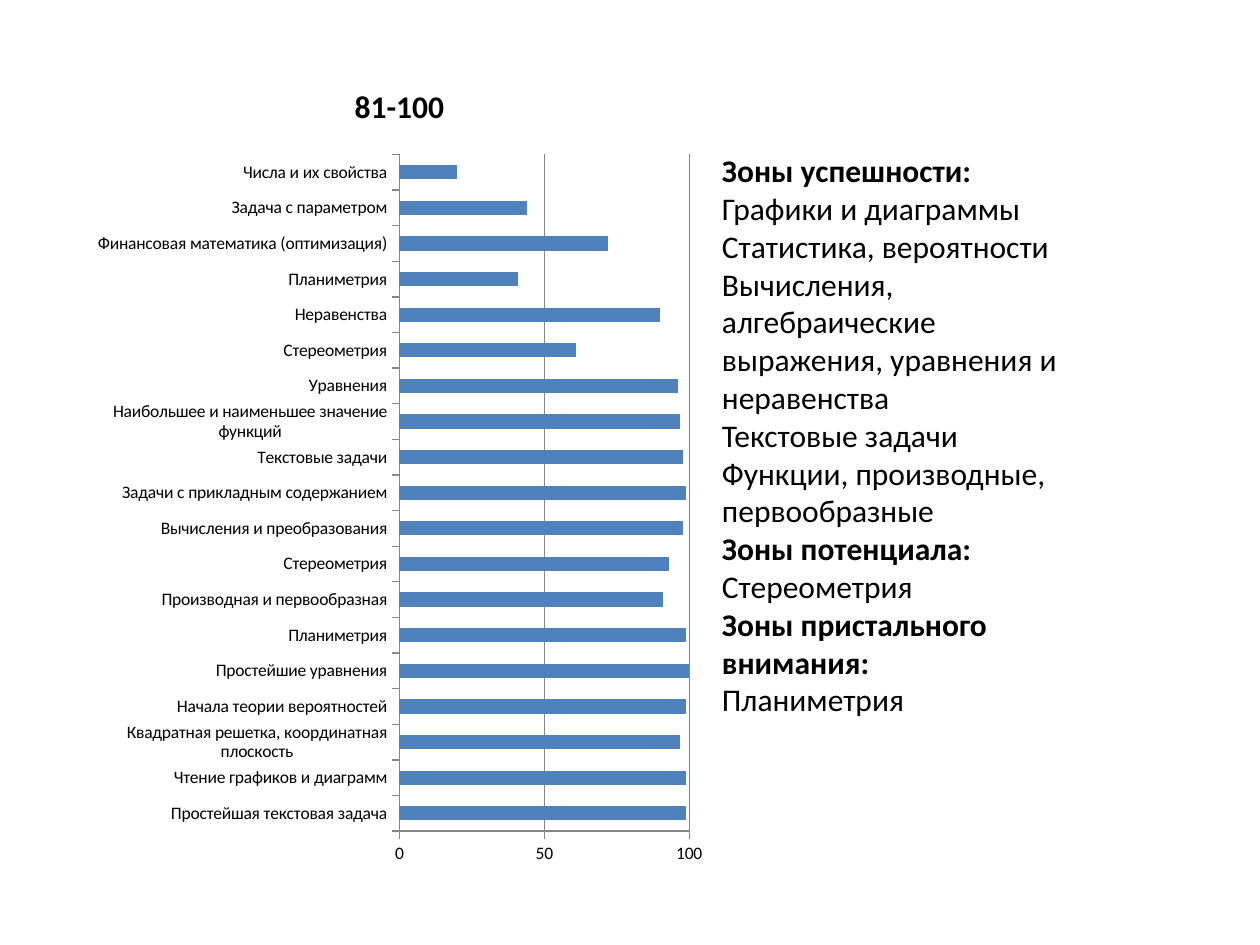
"""Build the slide with task results and success zones for the 81-100 score group."""
from dataclasses import dataclass

from lxml.etree import SubElement
from pptx import Presentation
from pptx.chart.data import CategoryChartData
from pptx.dml.color import RGBColor
from pptx.enum.chart import XL_CHART_TYPE as ChartType, XL_TICK_MARK as Tick
from pptx.enum.text import MSO_ANCHOR as Anchor, MSO_AUTO_SIZE as AutoSize
from pptx.oxml.ns import qn
from pptx.util import Inches, Pt


@dataclass(frozen=True)
class Theme:
    font: str = "Calibri"
    ink: RGBColor = RGBColor(0x00, 0x00, 0x00)
    bar: RGBColor = RGBColor(0x4F, 0x81, 0xBD)
    rule: RGBColor = RGBColor(0x86, 0x86, 0x86)
    label_size: int = 10
    text_size: int = 18
    rule_width: float = 0.75


THEME = Theme()


def write(paragraph, text, bold=False, size=THEME.text_size):
    run = paragraph.add_run()
    run.text = text
    run.font.name = THEME.font
    run.font.size = Pt(size)
    run.font.bold = bold
    run.font.color.rgb = THEME.ink


GROUP = "81-100"
RESULTS = [
    ("Простейшая текстовая задача", 99),
    ("Чтение графиков и диаграмм", 99),
    ("Квадратная решетка, координатная плоскость", 97),
    ("Начала теории вероятностей", 99),
    ("Простейшие уравнения", 100),
    ("Планиметрия", 99),
    ("Производная и первообразная", 91),
    ("Стереометрия", 93),
    ("Вычисления и преобразования", 98),
    ("Задачи с прикладным содержанием", 99),
    ("Текстовые задачи", 98),
    ("Наибольшее и наименьшее значение функций", 97),
    ("Уравнения", 96),
    ("Стереометрия", 61),
    ("Неравенства", 90),
    ("Планиметрия", 41),
    ("Финансовая математика (оптимизация)", 72),
    ("Задача с параметром", 44),
    ("Числа и их свойства", 20),
]
ZONES = {
    "Зоны успешности:": [
        "Графики и диаграммы",
        "Статистика, вероятности",
        "Вычисления, алгебраические выражения, уравнения и неравенства",
        "Текстовые задачи",
        "Функции, производные, первообразные",
    ],
    "Зоны потенциала:": ["Стереометрия"],
    "Зоны пристального внимания:": ["Планиметрия"],
}

deck = Presentation()
deck.slide_width, deck.slide_height = Inches(10), Inches(7.5)
slide = deck.slides.add_slide(deck.slide_layouts[1])
heading = slide.shapes.title.element
heading.getparent().remove(heading)

results = CategoryChartData()
results.categories = [task for task, _ in RESULTS]
results.add_series(GROUP, [score for _, score in RESULTS])
chart = slide.shapes.add_chart(
    ChartType.BAR_CLUSTERED, Inches(0.67), Inches(0.44), Inches(5), Inches(6.55), results
).chart
chart.has_legend = False
chart.font.name = THEME.font
chart.font.size = Pt(THEME.label_size)
chart.font.color.rgb = THEME.ink
chart.has_title = True
write(chart.chart_title.text_frame.paragraphs[0], GROUP, bold=True)
chart.chart_title.include_in_layout = False

bars = chart.plots[0]
bars.gap_width = 150
bars.vary_by_categories = False
fill = bars.series[0].format.fill
fill.solid()
fill.fore_color.rgb = THEME.bar

scores = chart.value_axis
scores.minimum_scale, scores.maximum_scale, scores.major_unit = 0, 100, 50
scores.has_major_gridlines = True
for axis in (chart.category_axis, scores):
    axis.major_tick_mark = Tick.OUTSIDE
    axis.minor_tick_mark = Tick.NONE
for line in (chart.category_axis.format.line, scores.format.line, scores.major_gridlines.format.line):
    line.color.rgb = THEME.rule
    line.width = Pt(THEME.rule_width)

plot_area = chart.element.find(".//" + qn("c:plotArea"))
layout = plot_area.find(qn("c:layout"))
if layout is None:
    layout = SubElement(plot_area, qn("c:layout"))
    plot_area.insert(0, layout)
manual = SubElement(layout, qn("c:manualLayout"))
for tag, value in [
    ("layoutTarget", "inner"), ("xMode", "edge"), ("yMode", "edge"),
    ("x", "0.5"), ("y", "0.12"), ("w", "0.46"), ("h", "0.82"),
]:
    SubElement(manual, qn(f"c:{tag}")).set("val", value)

zones = slide.placeholders[1]
zones.left, zones.top = Inches(5.63), Inches(1.15)
zones.width, zones.height = Inches(3.15), Inches(4.64)
frame = zones.text_frame
frame.word_wrap = True
frame.auto_size = AutoSize.SHAPE_TO_FIT_TEXT
frame.vertical_anchor = Anchor.TOP
lines = [(text, text == zone) for zone, topics in ZONES.items() for text in (zone, *topics)]
for index, (text, is_zone) in enumerate(lines):
    paragraph = frame.add_paragraph() if index else frame.paragraphs[0]
    props = paragraph._p.get_or_add_pPr()
    props.set("marL", "0")
    props.set("indent", "0")
    SubElement(props, qn("a:buNone"))
    paragraph.space_before = Pt(0)
    write(paragraph, text, bold=is_zone)

deck.save("out.pptx")
